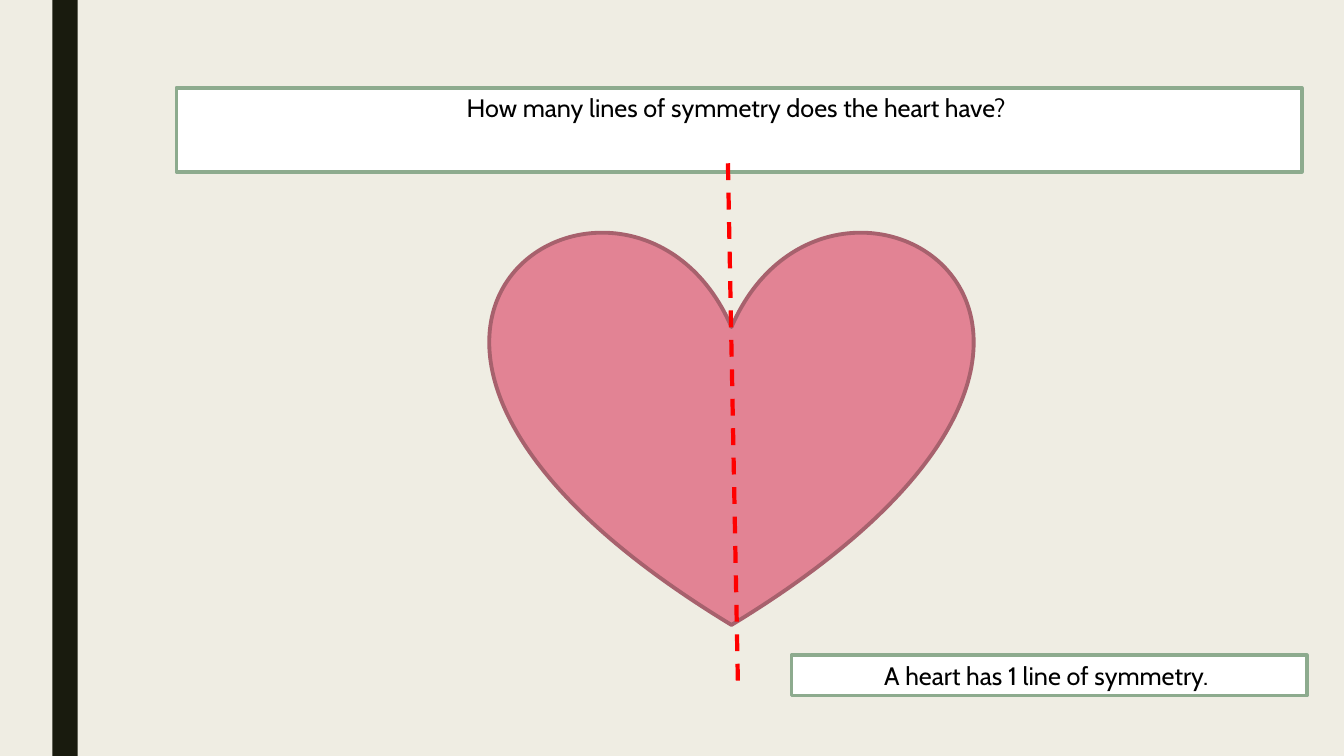
"""Builds a slide on the line of symmetry of a heart."""
import pptx
import pptx.dml.color
import pptx.enum.dml
import pptx.enum.shapes
import pptx.enum.text
import pptx.oxml.ns
import pptx.util
from lxml import etree

Inches = pptx.util.Inches
Pt = pptx.util.Pt
SHAPES = pptx.enum.shapes.MSO_SHAPE
COLORS = {
    "background": "EFEDE3",
    "stripe": "191B0E",
    "heart": "E28394",
    "heart_edge": "A7616D",
    "box": "FFFFFF",
    "box_edge": "8DAB8E",
    "axis": "FF0000",
    "text": "000000",
}


def rgb(name):
    return pptx.dml.color.RGBColor.from_string(COLORS[name])


def paint(shape, fill, edge=None):
    shape.fill.solid()
    shape.fill.fore_color.rgb = rgb(fill)
    if edge:
        shape.line.color.rgb = rgb(edge)
        shape.line.width = Pt(2.75)
    else:
        shape.line.fill.background()


def add_figure(slide, kind, left, top, width, height, fill, edge=None):
    figure = slide.shapes.add_shape(
        kind, Inches(left), Inches(top), Inches(width), Inches(height))
    figure.shadow.inherit = False
    paint(figure, fill, edge)


def fill_box(box, left, top, width, wording):
    box.left, box.top = Inches(left), Inches(top)
    box.width, box.height = Inches(width), Inches(0.4)
    paint(box, "box", "box_edge")
    frame = box.text_frame
    frame.word_wrap = True
    frame.auto_size = pptx.enum.text.MSO_AUTO_SIZE.SHAPE_TO_FIT_TEXT
    frame.vertical_anchor = pptx.enum.text.MSO_ANCHOR.TOP
    paragraph = frame.paragraphs[0]
    paragraph.alignment = pptx.enum.text.PP_ALIGN.CENTER
    run = paragraph.add_run()
    run.text = wording
    run.font.name = "Cabin"
    run.font.size = Pt(18)
    run.font.color.rgb = rgb("text")


def add_symmetry_line(slide, start, end):
    axis = slide.shapes.add_connector(
        pptx.enum.shapes.MSO_CONNECTOR.STRAIGHT,
        *(Inches(length) for length in start + end))
    axis.line.color.rgb = rgb("axis")
    axis.line.width = Pt(3)
    axis.line.dash_style = pptx.enum.dml.MSO_LINE.DASH
    properties = axis._element.spPr
    etree.SubElement(properties, pptx.oxml.ns.qn("a:effectLst"))


def main():
    deck = pptx.Presentation()
    deck.slide_width, deck.slide_height = Inches(13.33), Inches(7.5)
    slide = deck.slides.add_slide(deck.slide_layouts[5])
    slide.background.fill.solid()
    slide.background.fill.fore_color.rgb = rgb("background")

    add_figure(slide, SHAPES.RECTANGLE, 0.52, 0, 0.25, 7.5, "stripe")
    add_figure(slide, SHAPES.HEART, 4.87, 2.26, 4.77, 3.94, "heart", "heart_edge")
    fill_box(slide.shapes.title, 1.75, 0.87, 11.16,
             "How many lines of symmetry does the heart have? ")
    add_symmetry_line(slide, (7.22, 1.62), (7.32, 6.83))
    answer = slide.shapes.add_textbox(0, 0, 0, 0)
    fill_box(answer, 7.85, 6.5, 5.11, "A heart has 1 line of symmetry. ")

    deck.save("out.pptx")


if __name__ == "__main__":
    main()
